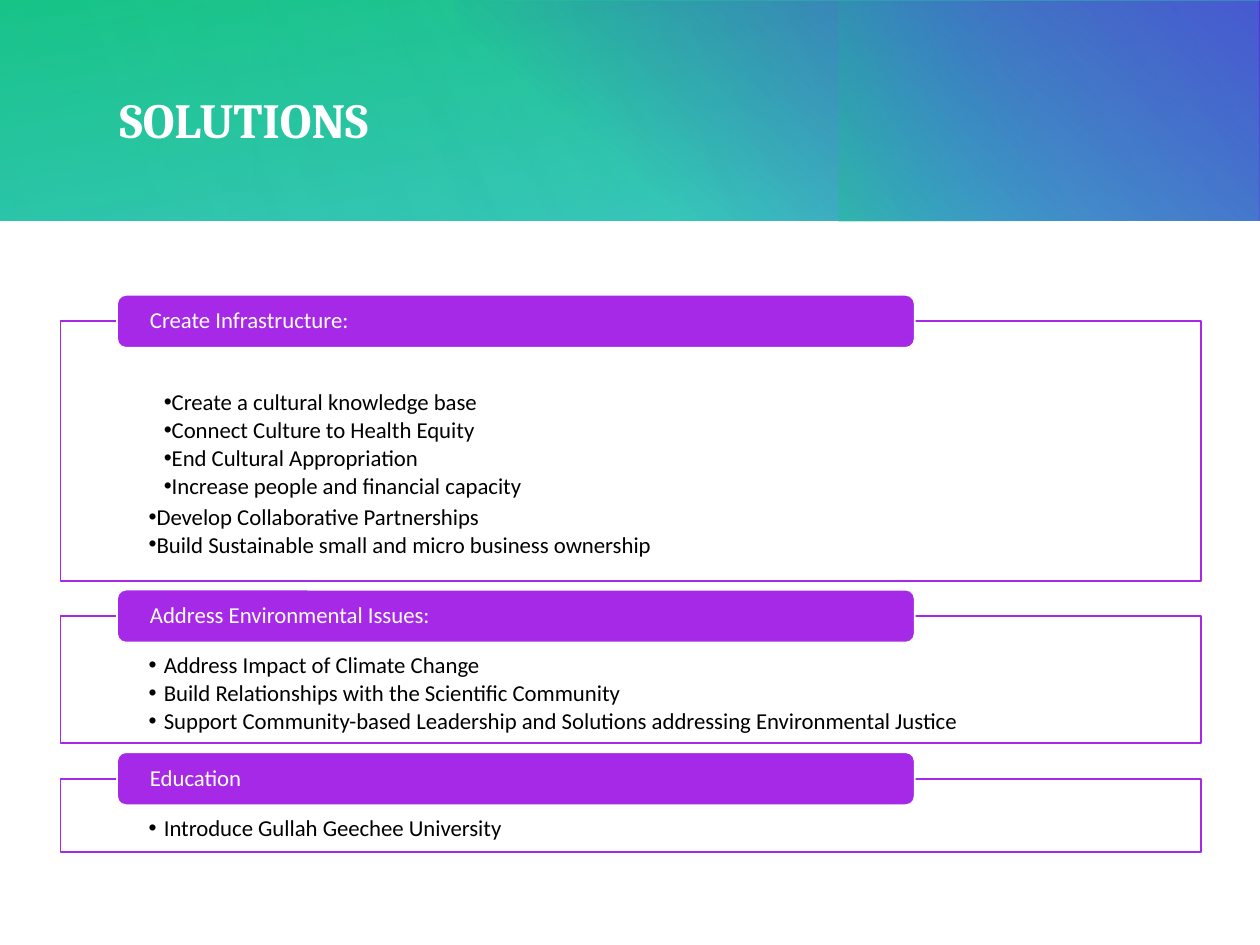
from lxml import etree
from pptx import Presentation
from pptx.dml.color import RGBColor
from pptx.enum.shapes import MSO_SHAPE
from pptx.enum.text import MSO_ANCHOR, PP_ALIGN
from pptx.oxml.ns import qn
from pptx.util import Inches, Pt

RECTANGLE, ROUNDED = MSO_SHAPE.RECTANGLE, MSO_SHAPE.ROUNDED_RECTANGLE
LEFT, TOP, MIDDLE = PP_ALIGN.LEFT, MSO_ANCHOR.TOP, MSO_ANCHOR.MIDDLE

COLORS = {
    "white": "FFFFFF", "black": "000000", "purple": "A629E7", "teal": "22BFBE",
    "green": "16C67B", "violet": "592FD9", "blue": "1787D5",
}
WIDTH, HEIGHT = 10, 7.5
BAND_HEIGHT = 1.75
CARD_LEFT, CARD_WIDTH, CARD_GAP = 0.48, 9.05, 0.28
BAR_LEFT, BAR_WIDTH, BAR_HEIGHT = 0.93, 6.33, 0.42
TEXT_SIZE = Pt(13)


def color(name):
    return RGBColor.from_string(COLORS[name])


def add_box(kind, left, top, width, height, fill=None, line=None):
    shape = slide.shapes.add_shape(
        kind, Inches(left), Inches(top), Inches(width), Inches(height))
    shape.shadow.inherit = False
    if fill:
        shape.fill.solid()
        shape.fill.fore_color.rgb = color(fill)
    if line:
        shape.line.color.rgb = color(line)
        shape.line.width = Pt(1)
    else:
        shape.line.fill.background()
    return shape


presentation = Presentation()
presentation.slide_width, presentation.slide_height = Inches(WIDTH), Inches(HEIGHT)
slide = presentation.slides.add_slide(presentation.slide_layouts[5])

# Header band: layered gradients as (position, colour, opacity), all in percent
layers = [
    ((0, 0, WIDTH, BAND_HEIGHT), 0, 260, [(0, "teal", 83), (100, "green", 100)]),
    ((3.61, 0.01, 6.39, 1.74), 0, 310, [(22, "violet", 0), (99, "violet", 100)]),
    ((7.18, -0.52, BAND_HEIGHT, 2.8), 270, 250, [(45, "blue", 0), (99, "green", 33)]),
    ((2.01, 0, 7.98, BAND_HEIGHT), 180, 330, [(0, "teal", 30), (99, "teal", 0)]),
    ((0, 0, 6.49, BAND_HEIGHT), 0, 340, [(0, "teal", 21), (99, "teal", 0)]),
]
for place, rotation, angle, stops in layers:
    layer = add_box(RECTANGLE, *place)
    layer.rotation = rotation
    layer.fill.gradient()
    gradient = layer.fill._xPr.find(qn("a:gradFill"))
    gradient.set("rotWithShape", "1")
    for child in list(gradient):
        gradient.remove(child)
    stop_list = etree.SubElement(gradient, qn("a:gsLst"))
    for position, name, opacity in stops:
        stop = etree.SubElement(stop_list, qn("a:gs"), pos=str(position * 1000))
        stop_color = etree.SubElement(stop, qn("a:srgbClr"), val=COLORS[name])
        etree.SubElement(stop_color, qn("a:alpha"), val=str(opacity * 1000))
    etree.SubElement(gradient, qn("a:lin"), ang=str(angle * 60000), scaled="0")

# Title, brought in front of the band
title = slide.shapes.title
slide.shapes._spTree.append(title._element)
title.left, title.top = Inches(0.95), Inches(0.41)
title.width, title.height = Inches(8.51), Inches(1.06)
frame = title.text_frame
frame.margin_left = frame.margin_right = frame.margin_top = frame.margin_bottom = 0
frame.vertical_anchor = MIDDLE
frame.text = "SOLUTIONS"
paragraph = frame.paragraphs[0]
paragraph.alignment = LEFT
paragraph.font.name, paragraph.font.size, paragraph.font.bold = "Cambria", Pt(28), True
paragraph.font.color.rgb = color("white")

# Cards: heading, height, top inset, items as (text, left margin, indent)
cards = [
    ("Create Infrastructure:", 2.06, 0.55, [
        ("Create a cultural knowledge base", 0.12, 0),
        ("Connect Culture to Health Equity", 0.12, 0),
        ("End Cultural Appropriation", 0.12, 0),
        ("Increase people and financial capacity", 0.12, 0),
        ("Develop Collaborative Partnerships", 0, 0),
        ("Build Sustainable small and micro business ownership", 0, 0),
    ]),
    ("Address Environmental Issues:", 1.01, 0.3, [
        ("Address Impact of Climate Change", 0.12, -0.12),
        ("Build Relationships with the Scientific Community", 0.12, -0.12),
        ("Support Community-based Leadership and Solutions addressing "
         "Environmental Justice", 0.12, -0.12),
    ]),
    ("Education", 0.58, 0.3, [
        ("Introduce Gullah Geechee University", 0.12, -0.12),
    ]),
]
card_top = 2.55
for heading, card_height, inset, items in cards:
    # Outlined card with its bullet list
    card = add_box(RECTANGLE, CARD_LEFT, card_top, CARD_WIDTH, card_height,
                   "white", "purple")
    frame = card.text_frame
    frame.word_wrap = True
    frame.vertical_anchor = TOP
    frame.margin_left = frame.margin_right = Inches(0.7)
    frame.margin_top, frame.margin_bottom = Inches(inset), Inches(0.1)
    for index, (text, margin, indent) in enumerate(items):
        paragraph = frame.paragraphs[0] if index == 0 else frame.add_paragraph()
        paragraph.text = text
        paragraph.alignment = LEFT
        if margin:
            paragraph.line_spacing = 0.9
            paragraph.space_after = Pt(2)
        properties = paragraph._p.get_or_add_pPr()
        properties.set("marL", str(Inches(margin)))
        properties.set("indent", str(Inches(indent)))
        etree.SubElement(properties, qn("a:buFont"), typeface="Arial")
        etree.SubElement(properties, qn("a:buChar"), char="•")
        paragraph.font.name, paragraph.font.size = "Calibri", TEXT_SIZE
        paragraph.font.color.rgb = color("black")

    # Heading bar across the card's top edge
    bar = add_box(ROUNDED, BAR_LEFT, card_top - BAR_HEIGHT / 2, BAR_WIDTH, BAR_HEIGHT,
                  "purple", "white")
    frame = bar.text_frame
    frame.word_wrap = True
    frame.vertical_anchor = MIDDLE
    frame.margin_left = frame.margin_right = Inches(0.24)
    frame.margin_top = frame.margin_bottom = 0
    frame.text = heading
    paragraph = frame.paragraphs[0]
    paragraph.alignment = LEFT
    paragraph.line_spacing = 0.9
    paragraph.font.name, paragraph.font.size = "Calibri", TEXT_SIZE
    paragraph.font.color.rgb = color("white")
    card_top += card_height + CARD_GAP

presentation.save("out.pptx")
